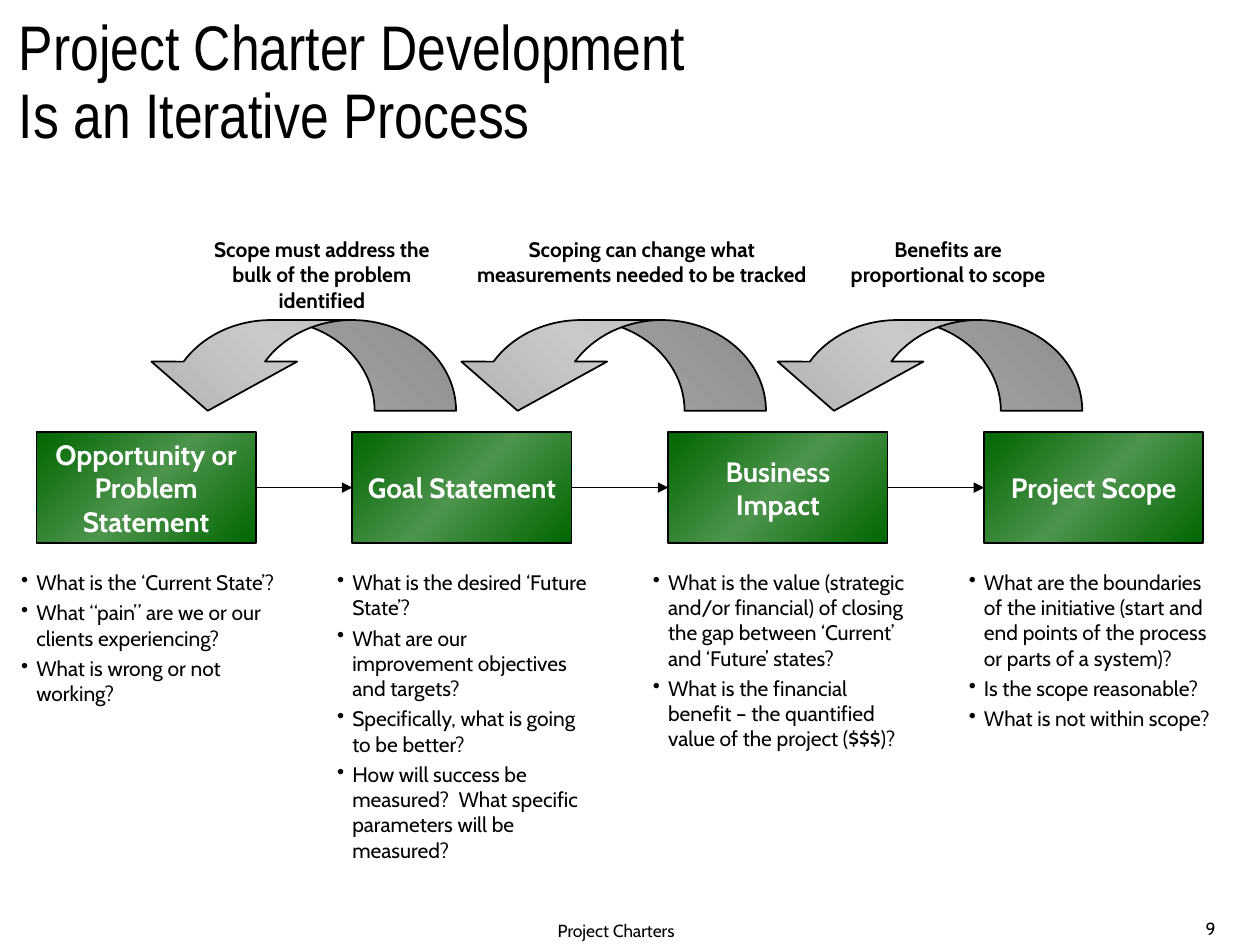
from copy import deepcopy

from pptx import Presentation
from pptx.dml.color import RGBColor
from pptx.enum.shapes import MSO_CONNECTOR as CONN, MSO_SHAPE as SHAPE
from pptx.enum.text import MSO_ANCHOR as ANCHOR, MSO_AUTO_SIZE as AUTO, PP_ALIGN as ALIGN
from pptx.oxml.ns import qn
from pptx.util import Inches, Pt
from lxml.etree import SubElement

BLACK, WHITE = "000000", "FFFFFF"
GREEN = ("006600", "4D944D")
GREY = ("B2B2B2", "C9C9C9")

# Columns: one box with its questions each
LEFT, PITCH = 0.29, 2.507
BOX_TOP, BOX_W, BOX_H = 3.43, 1.74, 0.88
STEPS = [
    ("Opportunity or Problem Statement", [
        "What is the ‘Current State’?",
        "What “pain” are we or our clients experiencing?",
        "What is wrong or not working?"]),
    ("Goal Statement", [
        "What is the desired ‘Future State’?",
        "What are our improvement objectives and targets?",
        "Specifically, what is going to be better?",
        "How will success be measured?  What specific parameters will be measured?"]),
    ("Business\nImpact", [
        "What is the value (strategic and/or financial) of closing the gap "
        "between ‘Current’ and ‘Future’ states?",
        "What is the financial benefit – the quantified value of the project ($$$)?"]),
    ("Project Scope", [
        "What are the boundaries of the initiative (start and end points of "
        "the process or parts of a system)?",
        "Is the scope reasonable?",
        "What is not within scope?"]),
]

# Feedback loops: arrow left, caption left, caption width, caption
LOOPS = [
    (1.07, 1.49, 2.13, "Scope must address the bulk of the problem identified"),
    (3.53, 3.66, 2.87, "Scoping can change what measurements needed to be tracked"),
    (6.04, 6.64, 1.77, "Benefits are proportional to scope"),
]


def rgb(value):
    return RGBColor.from_string(value)


def write(tf, lines, color=BLACK, align=ALIGN.LEFT, anchor=ANCHOR.TOP, **font):
    """Fill a text frame with one paragraph per line."""
    tf.word_wrap = True
    tf.vertical_anchor = anchor
    for i, line in enumerate(lines):
        p = tf.paragraphs[0] if i == 0 else tf.add_paragraph()
        p.text = line
        p.alignment = align
        for name, value in {"name": "Cabin", **font}.items():
            setattr(p.font, name, value)
        p.font.color.rgb = rgb(color)


def add_text(s, x, y, w, h, lines, **fmt):
    tf = s.shapes.add_textbox(Inches(x), Inches(y), Inches(w), Inches(h)).text_frame
    write(tf, lines, **fmt)
    return tf


def add_bullets(s, x, y, w, h, lines):
    tf = add_text(s, x, y, w, h, lines, size=Pt(12))
    for p in tf.paragraphs:
        p.space_before = Pt(3)
        pPr = p._p.get_or_add_pPr()
        pPr.set("marL", str(Inches(0.12)))
        pPr.set("indent", str(-Inches(0.12)))
        bullet = pPr.makeelement(qn("a:buChar"), {"char": "•"})
        pPr.insert_element_before(bullet, "a:tabLst", "a:defRPr", "a:extLst")


def add_gradient_shape(s, kind, x, y, w, h, colors):
    """Add an outlined shape, shaded edge - middle - edge along the diagonal."""
    sp = s.shapes.add_shape(kind, Inches(x), Inches(y), Inches(w), Inches(h))
    sp.shadow.inherit = False
    sp.line.color.rgb = rgb(BLACK)
    sp.line.width = Pt(1)
    sp.fill.gradient()
    sp.fill.gradient_angle = 315
    stops = sp._element.spPr.find(qn("a:gradFill")).find(qn("a:gsLst"))
    stops.insert(1, deepcopy(stops[0]))
    edge, middle = colors
    for stop, color, pos in zip(sp.fill.gradient_stops, (edge, middle, edge), (0, 0.5, 1)):
        stop.color.rgb = rgb(color)
        stop.position = pos
    return sp


def add_arrow(s, x1, x2, y):
    line = s.shapes.add_connector(CONN.STRAIGHT, Inches(x1), Inches(y), Inches(x2), Inches(y))
    line.line.color.rgb = rgb(BLACK)
    line.line.width = Pt(1)
    SubElement(line.line._get_or_add_ln(), qn("a:tailEnd"), type="triangle")
    SubElement(line._element.spPr, qn("a:effectLst"))


def add_loop(s, x):
    sp = add_gradient_shape(s, SHAPE.CURVED_DOWN_ARROW, x, 2.54, 2.55, 0.72, GREY)
    for i, value in enumerate((0.898, 1.607, 0.542)):
        sp.adjustments[i] = value
    sp._element.spPr.xfrm.set("flipH", "1")


def add_title(s, text):
    title = s.shapes.title
    place = {"left": 0.05, "top": 0.01, "width": 8.31, "height": 1.25}
    for name, value in place.items():
        setattr(title, name, Inches(value))
    tf = title.text_frame
    write(tf, [text], anchor=ANCHOR.BOTTOM, name="Arial Narrow", size=Pt(36))
    tf.auto_size = AUTO.NONE
    tf.paragraphs[0].line_spacing = 0.9


def main():
    prs = Presentation()
    prs.slide_width, prs.slide_height = Inches(10), Inches(7.5)
    s = prs.slides.add_slide(prs.slide_layouts[5])
    add_title(s, "Project Charter Development\vIs an Iterative Process")

    # Steps, joined by arrows
    for i, (name, questions) in enumerate(STEPS):
        x = LEFT + i * PITCH
        box = add_gradient_shape(s, SHAPE.RECTANGLE, x, BOX_TOP, BOX_W, BOX_H, GREEN)
        write(box.text_frame, name.split("\n"), color=WHITE, align=ALIGN.CENTER,
              anchor=ANCHOR.MIDDLE, size=Pt(16), bold=True)
        add_bullets(s, x - 0.22, 4.47, 2.22, 2.45, questions)
        if i:
            add_arrow(s, x - PITCH + BOX_W, x, BOX_TOP + BOX_H / 2)

    # Feedback loops with captions
    for x, text_x, text_w, caption in LOOPS:
        add_loop(s, x)
        add_text(s, text_x, 1.83, text_w, 0.7, [caption], align=ALIGN.CENTER,
                 size=Pt(12), bold=True)

    # Footer
    add_text(s, 1.55, 7.25, 6.68, 0.25, ["Project Charters"], align=ALIGN.CENTER, size=Pt(10))
    add_text(s, 9.47, 7.25, 0.43, 0.25, ["9"], anchor=ANCHOR.BOTTOM, size=Pt(10))

    prs.save("out.pptx")


if __name__ == "__main__":
    main()
